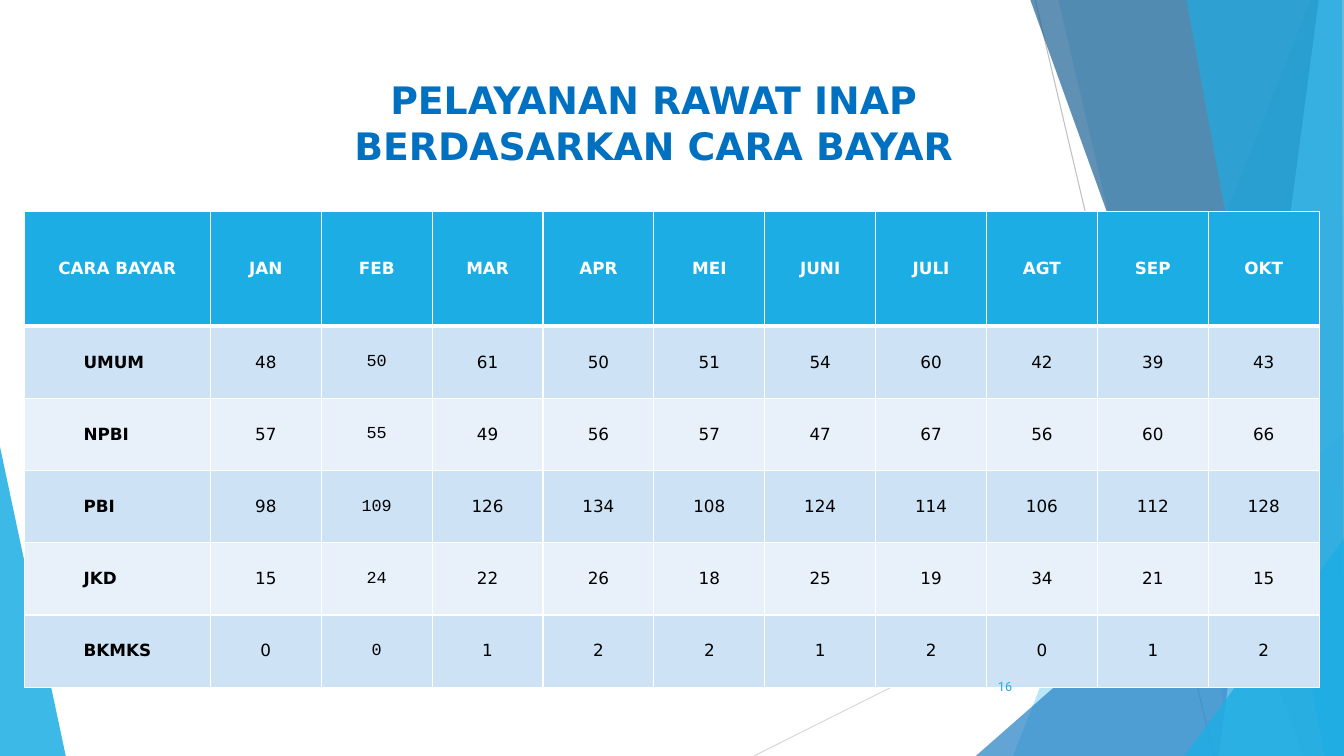
from dataclasses import dataclass

from lxml.etree import SubElement as Sub
from pptx import Presentation
from pptx.dml.color import RGBColor as Rgb
from pptx.enum.shapes import MSO_CONNECTOR as Link
from pptx.enum.text import MSO_ANCHOR as Anchor, PP_ALIGN as Align
from pptx.oxml.ns import qn
from pptx.util import Pt


@dataclass(frozen=True)
class Theme:
    """Colours, fonts and type sizes of the page."""
    accent: str = "1CADE4"
    blue: str = "2683C6"
    navy: str = "1D6294"
    sky: str = "77CEEF"
    title: str = "0070C0"
    white: str = "FFFFFF"
    black: str = "000000"
    band: str = "CDE3F5"
    light_band: str = "E8F1FA"
    pale_line: str = "D9D9D9"
    grey_line: str = "BFBFBF"
    font: str = "DejaVu Sans"
    mono: str = "Courier New"
    number_font: str = "Roboto"
    title_size: int = 27
    table_size: int = 12
    number_size: int = 9


class Painter:
    """Draws each kind of element on the current page."""

    def __init__(self, page, theme):
        """Keep the page and its theme."""
        self.page = page
        self.theme = theme

    def facet(self, points, color, opacity):
        """Draw a translucent polygon."""
        start, *rest = [(Pt(x), Pt(y)) for x, y in points]
        builder = self.page.shapes.build_freeform(*start, scale=1.0)
        builder.add_line_segments(rest, close=True)
        shape = builder.convert_to_shape()
        shape.shadow.inherit = False
        shape.fill.solid()
        shape.fill.fore_color.rgb = Rgb.from_string(color)
        shape.line.fill.background()
        tint = shape._element.spPr.find(qn("a:solidFill"))[0]
        Sub(tint, qn("a:alpha"), val=str(opacity * 1000))

    def line(self, start, end, color):
        """Draw a thin straight line."""
        ends = [Pt(value) for value in (*start, *end)]
        line = self.page.shapes.add_connector(Link.STRAIGHT, *ends)
        line.line.color.rgb = Rgb.from_string(color)
        line.line.width = Pt(0.75)
        Sub(line._element.spPr, qn("a:effectLst"))

    def span(self, para, text, size, color, font, bold=False):
        """Add one styled run to a paragraph."""
        span = para.add_run()
        span.text = text
        span.font.size = Pt(size)
        span.font.name = font
        span.font.bold = bold
        span.font.color.rgb = Rgb.from_string(color)

    def text(self, place, lines, size, color, font, align, anchor, bold=False, top=3.6, right=7.2):
        """Add a text box holding one paragraph of broken lines."""
        box = self.page.shapes.add_textbox(*[Pt(value) for value in place])
        frame = box.text_frame
        frame.word_wrap = True
        frame.vertical_anchor = anchor
        frame.margin_top = Pt(top)
        frame.margin_right = Pt(right)
        para = frame.paragraphs[0]
        para.alignment = align
        for index, words in enumerate(lines):
            if index:
                para.add_line_break()
            self.span(para, words, size, color, font, bold)

    def borders(self, cell, widths):
        """Give a cell white borders of the given widths."""
        props = cell._tc.get_or_add_tcPr()
        for side, width in widths.items():
            edge = Sub(props, qn(f"a:ln{side}"), w=str(Pt(width)))
            Sub(Sub(edge, qn("a:solidFill")), qn("a:srgbClr"), val=self.theme.white)

    def cell(self, cell, text, row, column):
        """Style and fill one table cell by its position."""
        theme = self.theme
        header, label = row == 0, column == 0
        self.borders(cell, {"L": 1, "R": 1, "T": 3 if row == 1 else 1, "B": 3 if header else 1})
        cell.fill.solid()
        fill = theme.accent if header else theme.band if row % 2 else theme.light_band
        cell.fill.fore_color.rgb = Rgb.from_string(fill)
        cell.vertical_anchor = Anchor.MIDDLE
        padded = header or column < 2
        cell.margin_left = cell.margin_right = Pt(14.4 if padded else 0)
        cell.margin_top = cell.margin_bottom = Pt(5 if padded else 0)
        para = cell.text_frame.paragraphs[0]
        if label and not header:
            para._p.get_or_add_pPr().set("marL", str(Pt(28)))
        else:
            para.alignment = Align.CENTER
        font = theme.mono if column == 2 and not header else theme.font
        color = theme.white if header else theme.black
        self.span(para, str(text), theme.table_size, color, font, header or label)

    def table(self, left, top, widths, heights, rows):
        """Add a table with a header row and banded body."""
        place = [Pt(value) for value in (left, top, sum(widths), sum(heights))]
        table = self.page.shapes.add_table(len(rows), len(widths), *place).table
        table.horz_banding = False
        for column, width in zip(table.columns, widths):
            column.width = Pt(width)
        for line, height in zip(table.rows, heights):
            line.height = Pt(height)
        for row, values in enumerate(rows):
            for column, value in enumerate(values):
                self.cell(table.cell(row, column), value, row, column)


PAYMENTS = [
    ("CARA BAYAR", "JAN", "FEB", "MAR", "APR", "MEI", "JUNI", "JULI", "AGT", "SEP", "OKT"),
    ("UMUM", 48, 50, 61, 50, 51, 54, 60, 42, 39, 43),
    ("NPBI", 57, 55, 49, 56, 57, 47, 67, 56, 60, 66),
    ("PBI", 98, 109, 126, 134, 108, 124, 114, 106, 112, 128),
    ("JKD", 15, 24, 22, 26, 18, 25, 19, 34, 21, 15),
    ("BKMKS", 0, 0, 1, 2, 2, 1, 2, 0, 1, 2),
]


def main():
    """Build the page and save the deck."""
    theme = Theme()
    deck = Presentation()
    deck.slide_width, deck.slide_height = Pt(960), Pt(540)
    painter = Painter(deck.slides.add_slide(deck.slide_layouts[6]), theme)

    painter.facet([(0, 319), (47, 540), (0, 540)], theme.accent, 85)
    painter.line((538.5, 540), (960, 329), theme.pale_line)
    painter.line((739.5, 0), (867, 540), theme.grey_line)
    facets = [
        ([(936, 0), (723.6, 540), (960, 540), (960, 0)], theme.accent, 30),
        ([(756, 0), (882.7, 540), (960, 540), (960, 0)], theme.accent, 20),
        ([(697, 540), (960, 309), (960, 540)], theme.blue, 72),
        ([(736, 0), (931, 540), (960, 540), (960, 0)], theme.navy, 70),
        ([(942, 0), (870.5, 540), (960, 540), (960, 0)], theme.sky, 70),
        ([(847.5, 0), (946, 540), (960, 540), (958.5, 0)], theme.accent, 65),
        ([(846, 540), (960, 385), (960, 540)], theme.accent, 80),
    ]
    for points, color, opacity in facets:
        painter.facet(points, color, opacity)

    painter.text((39.6, 49, 864, 90), ["PELAYANAN RAWAT INAP", "BERDASARKAN CARA BAYAR"],
                 theme.title_size, theme.title, theme.font, Align.CENTER, Anchor.TOP,
                 bold=True, top=6, right=16.6)
    painter.table(17.3, 151, [133] + [79.2] * 10, [82] + [51.6] * 5, PAYMENTS)
    painter.text((676, 476, 54, 29), ["16"], theme.number_size, theme.accent,
                 theme.number_font, Align.RIGHT, Anchor.MIDDLE)
    deck.save("out.pptx")


if __name__ == "__main__":
    main()
